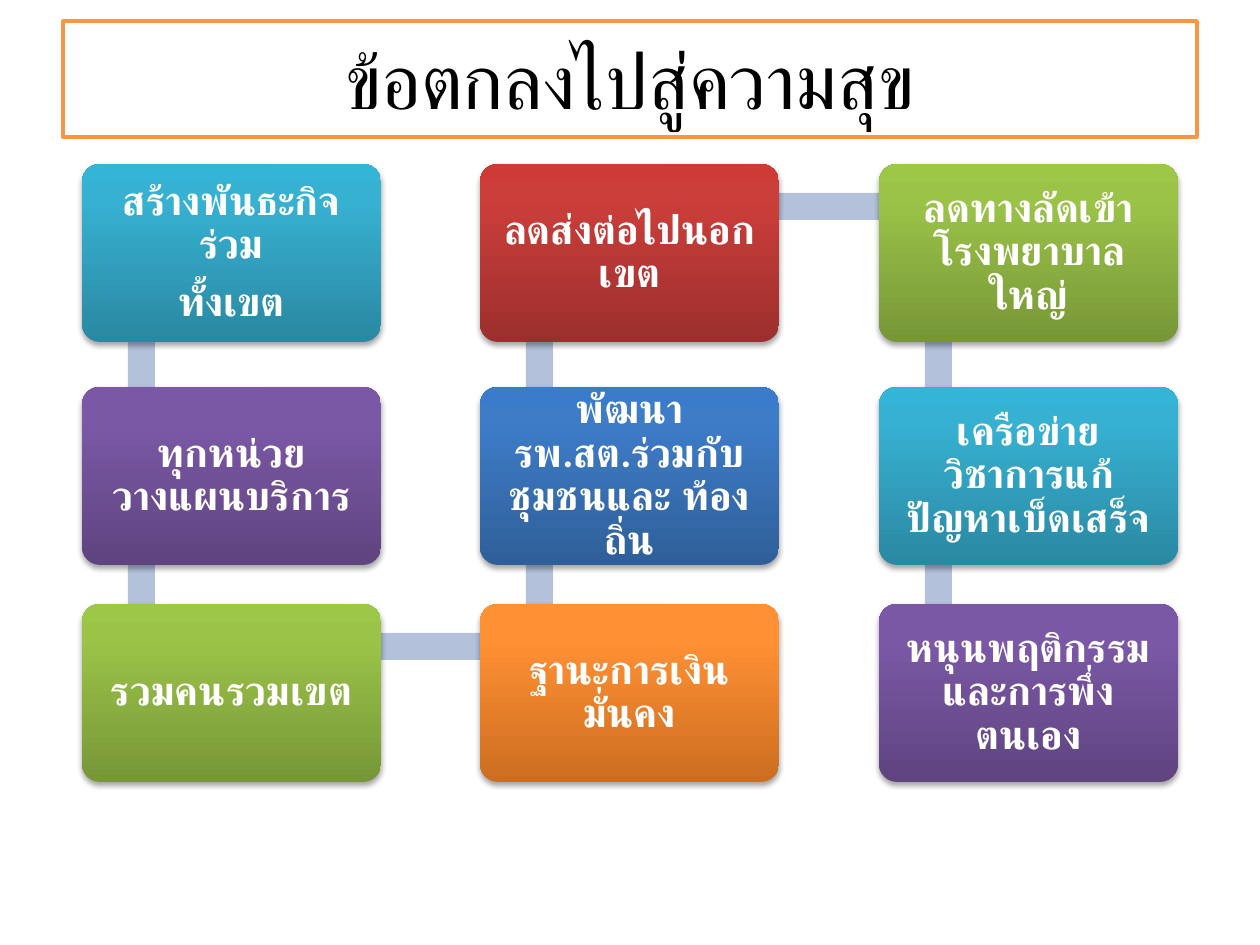
"""Build the slide that shows nine agreements along a snaking path."""
from copy import deepcopy
from itertools import zip_longest
from typing import Any, NamedTuple

from lxml.etree import SubElement
from pptx import Presentation
from pptx.dml.color import RGBColor
from pptx.enum.lang import MSO_LANGUAGE_ID as Language
from pptx.enum.shapes import MSO_SHAPE as Shape
from pptx.enum.text import MSO_ANCHOR as Anchor, MSO_AUTO_SIZE as AutoSize, PP_ALIGN as Align
from pptx.oxml.ns import qn
from pptx.util import Emu, Pt

PX_PER_INCH = 126
WHITE = RGBColor(0xFF, 0xFF, 0xFF)
BLACK = RGBColor(0x00, 0x00, 0x00)
ORANGE_LINE = RGBColor(0xF7, 0x96, 0x46)
PATH_BLUE = RGBColor(0xB3, 0xC1, 0xDB)
TEAL = (RGBColor(0x2A, 0x88, 0xA2), RGBColor(0x37, 0xB1, 0xD2), RGBColor(0x34, 0xB4, 0xD6))
PURPLE = (RGBColor(0x5F, 0x44, 0x80), RGBColor(0x7B, 0x58, 0xA6), RGBColor(0x7C, 0x57, 0xA8))
GREEN = (RGBColor(0x77, 0x97, 0x37), RGBColor(0x9B, 0xC3, 0x48), RGBColor(0x9D, 0xC7, 0x46))
ORANGE = (RGBColor(0xCC, 0x6E, 0x20), RGBColor(0xFF, 0x90, 0x34), RGBColor(0xFF, 0x91, 0x36))
BLUE = (RGBColor(0x2F, 0x5F, 0x99), RGBColor(0x3D, 0x7C, 0xC7), RGBColor(0x3A, 0x7C, 0xCB))
RED = (RGBColor(0x9C, 0x2F, 0x2D), RGBColor(0xCB, 0x3E, 0x3A), RGBColor(0xCE, 0x3B, 0x37))
STOP_POSITIONS = (0, 0.8, 1)

COLUMN_LEFTS = (82, 480, 879)
ROW_TOPS = (164, 387, 604)
CARD_WIDTH, CARD_HEIGHT, CARD_INSET = 299, 178, 13
BAR_THICKNESS = 27


class Card(NamedTuple):
    """One agreement, its place in the grid and its gradient."""
    column: int
    row: int
    gradient: tuple[RGBColor, ...]
    lines: tuple[str, ...]


CARDS = (
    Card(0, 0, TEAL, ("สร้างพันธะกิจร่วม", "ทั้งเขต")),
    Card(0, 1, PURPLE, ("ทุกหน่วยวางแผนบริการ",)),
    Card(0, 2, GREEN, ("รวมคนรวมเขต",)),
    Card(1, 2, ORANGE, ("ฐานะการเงินมั่นคง",)),
    Card(1, 1, BLUE, ("พัฒนา รพ.สต.ร่วมกับชุมชนและ ท้องถิ่น",)),
    Card(1, 0, RED, ("ลดส่งต่อไปนอกเขต",)),
    Card(2, 0, GREEN, ("ลดทางลัดเข้าโรงพยาบาลใหญ่",)),
    Card(2, 1, TEAL, ("เครือข่ายวิชาการแก้ปัญหาเบ็ดเสร็จ",)),
    Card(2, 2, PURPLE, ("หนุนพฤติกรรมและการพึ่งตนเอง",)),
)


def px(length: int) -> Emu:
    """Turn pixels into EMU."""
    return Emu(round(length * 914400 / PX_PER_INCH))


def apply(target: Any, formats: dict[str, Any]) -> None:
    """Set every attribute in a dict of format values."""
    for attribute, value in formats.items():
        setattr(target, attribute, value)


def write(frame: Any, lines: tuple[str, ...], color: RGBColor, font: dict[str, Any],
          spacing: dict[str, Any]) -> None:
    """Fill a text frame with centred Thai paragraphs."""
    apply(frame, {"word_wrap": True, "auto_size": AutoSize.NONE,
                  "vertical_anchor": Anchor.MIDDLE})
    frame.text = "\n".join(lines)
    for paragraph in frame.paragraphs:
        apply(paragraph, {"alignment": Align.CENTER, **spacing})
        for run in paragraph.runs:
            apply(run.font, {"name": "Calibri", "language_id": Language.THAI, **font})
            run.font.color.rgb = color


def draw_title(slide: Any, text: str) -> None:
    """Place the framed title."""
    title = slide.shapes.title
    apply(title, {"left": px(63), "top": px(21), "width": px(1134), "height": px(116)})
    title.fill.solid()
    title.fill.fore_color.rgb = WHITE
    title.line.color.rgb = ORANGE_LINE
    title.line.width = Pt(2)
    write(title.text_frame, (text,), BLACK, {"size": Pt(44)}, {})


def draw_bar(slide: Any, start: Card, end: Card) -> None:
    """Draw the stretch of path between two neighbouring cards."""
    left, top = COLUMN_LEFTS[start.column], ROW_TOPS[min(start.row, end.row)]
    if start.column == end.column:
        length = ROW_TOPS[max(start.row, end.row)] - top - 4
        box = (left + 46, top + 44, BAR_THICKNESS, length)
    else:
        length = COLUMN_LEFTS[end.column] - left - 7
        box = (left + 61, top + 29, length, BAR_THICKNESS)
    bar = slide.shapes.add_shape(Shape.RECTANGLE, *map(px, box))
    bar.shadow.inherit = False
    bar.fill.solid()
    bar.fill.fore_color.rgb = PATH_BLUE
    bar.line.fill.background()


def fill_gradient(shape: Any, colors: tuple[RGBColor, ...]) -> None:
    """Give a shape a three-stop gradient that rises from the bottom."""
    shape.fill.gradient()
    shape.fill.gradient_angle = 90
    stop_list = next(shape.element.spPr.iter(qn("a:gsLst")))
    stop_list.append(deepcopy(stop_list[-1]))
    for stop, color, position in zip(shape.fill.gradient_stops, colors, STOP_POSITIONS):
        stop.color.rgb = color
        stop.position = position


def add_soft_shadow(shape: Any) -> None:
    """Cast a soft shadow straight down."""
    shape.shadow.inherit = False
    effects = shape.element.spPr.find(qn("a:effectLst"))
    shadow = SubElement(effects, qn("a:outerShdw"), blurRad=str(Pt(3.1)), dist=str(Pt(1.8)),
                        dir="5400000", rotWithShape="0")
    black = SubElement(shadow, qn("a:srgbClr"), val=str(BLACK))
    SubElement(black, qn("a:alpha"), val="35000")


def draw_card(slide: Any, card: Card) -> None:
    """Draw one rounded card with its text."""
    box = (COLUMN_LEFTS[card.column], ROW_TOPS[card.row], CARD_WIDTH, CARD_HEIGHT)
    shape = slide.shapes.add_shape(Shape.ROUNDED_RECTANGLE, *map(px, box))
    shape.adjustments[0] = 0.1
    fill_gradient(shape, card.gradient)
    shape.line.fill.background()
    add_soft_shadow(shape)
    sides = ("left", "top", "right", "bottom")
    apply(shape.text_frame, {f"margin_{side}": px(CARD_INSET) for side in sides})
    write(shape.text_frame, card.lines, WHITE, {"size": Pt(23), "bold": True},
          {"line_spacing": 0.9, "space_after": Pt(8)})


def main() -> None:
    """Build and save the presentation."""
    presentation = Presentation()
    apply(presentation, {"slide_width": px(1260), "slide_height": px(945)})
    slide = presentation.slides.add_slide(presentation.slide_layouts[5])
    draw_title(slide, "ข้อตกลงไปสู่ความสุข")
    for card, following in zip_longest(CARDS, CARDS[1:]):
        if following:
            draw_bar(slide, card, following)
        draw_card(slide, card)
    presentation.save("out.pptx")


if __name__ == "__main__":
    main()
